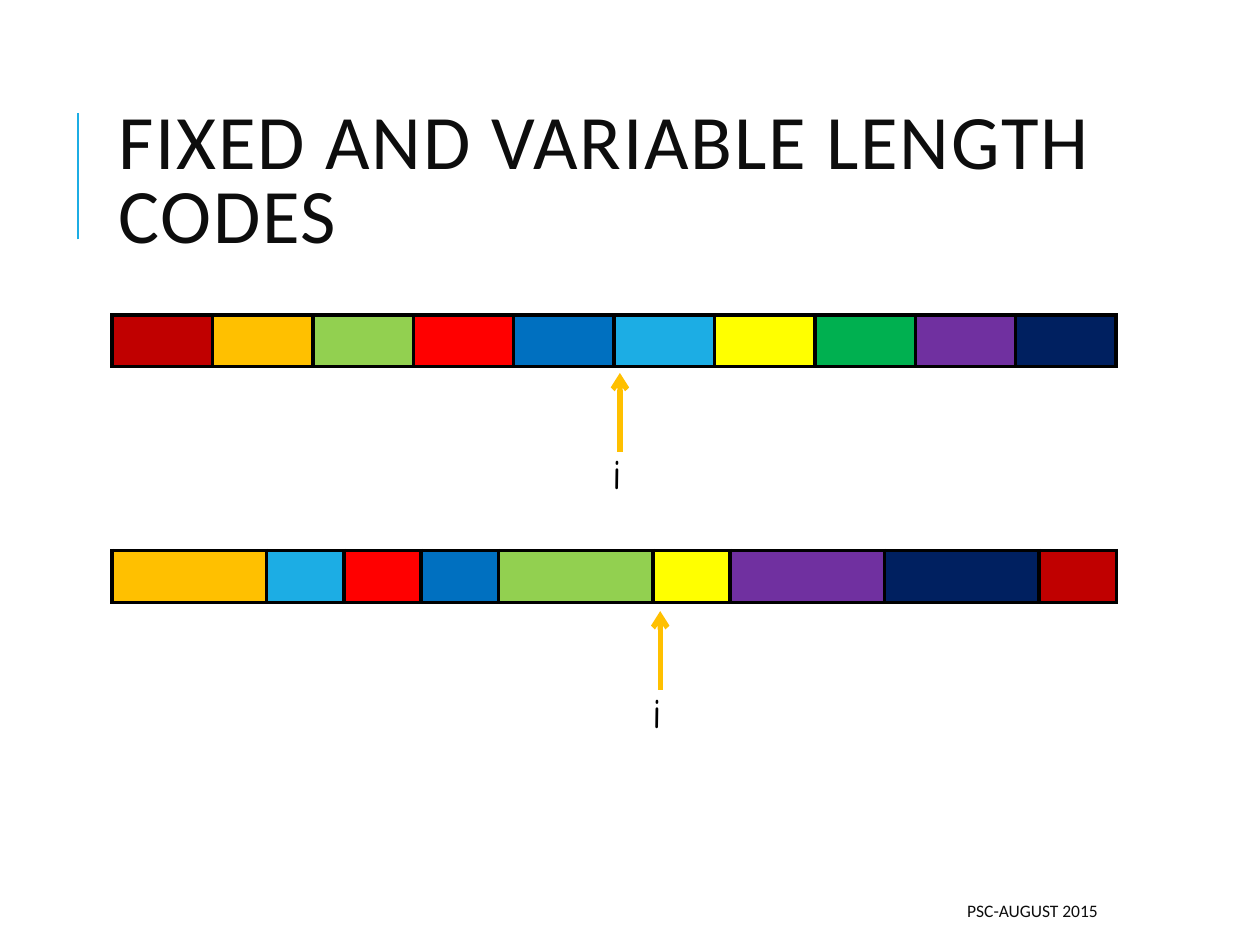
import pptx
import pptx.dml.color
import pptx.enum.shapes
import pptx.enum.text
import pptx.oxml
import pptx.oxml.ns
import pptx.util
from lxml import etree

COLORS = {
    "black": "000000", "text": "0D0D0D", "dark red": "C00000", "orange": "FFC000",
    "lime": "92D050", "red": "FF0000", "blue": "0070C0", "sky": "1CADE4",
    "yellow": "FFFF00", "green": "00B050", "purple": "7030A0", "navy": "002060",
}
FIXED_CODES = ["dark red", "orange", "lime", "red", "blue",
               "sky", "yellow", "green", "purple", "navy"]
# Each variable-length code takes one or two units
VARIABLE_CODES = [("orange", 2), ("sky", 1), ("red", 1), ("blue", 1), ("lime", 2),
                  ("yellow", 1), ("purple", 2), ("navy", 2), ("dark red", 1)]
BAR_LEFT, BAR_WIDTH, BAR_HEIGHT = 0.89, 7.97, 0.41
BORDER_WIDTH = 2.25
inches = pptx.util.Inches


def rgb(name):
    return pptx.dml.color.RGBColor.from_string(COLORS[name])


def format_text(text_frame, size, font, color, align=None):
    paragraph = text_frame.paragraphs[0]
    paragraph.alignment = align
    run = paragraph.runs[0]
    run.font.size = pptx.util.Pt(size)
    run.font.name = font
    run.font.color.rgb = rgb(color)
    return paragraph


def set_title(slide, text):
    title = slide.shapes.title
    title.left, title.top = inches(0.84), inches(0.64)
    title.width, title.height = inches(7.97), inches(1.64)
    text_frame = title.text_frame
    text_frame.text = text
    text_frame.auto_size = pptx.enum.text.MSO_AUTO_SIZE.NONE
    text_frame.vertical_anchor = pptx.enum.text.MSO_ANCHOR.MIDDLE
    paragraph = format_text(text_frame, 44, "Calibri", "text", pptx.enum.text.PP_ALIGN.LEFT)
    paragraph.line_spacing = 0.8
    paragraph.space_before = pptx.util.Pt(0)
    paragraph.runs[0].font._element.set("spc", "100")


def add_text(slide, text, box, size, font, color, align=None, wrap=False):
    shape = slide.shapes.add_textbox(*map(inches, box))
    text_frame = shape.text_frame
    text_frame.text = text
    text_frame.word_wrap = wrap
    format_text(text_frame, size, font, color, align)
    return shape


def add_line(slide, x, start, end, color, width, arrow=False):
    line = slide.shapes.add_connector(
        pptx.enum.shapes.MSO_CONNECTOR.STRAIGHT,
        inches(x), inches(start), inches(x), inches(end))
    line.line.color.rgb = rgb(color)
    line.line.width = pptx.util.Pt(width)
    if arrow:
        head = etree.SubElement(line.line._get_or_add_ln(), pptx.oxml.ns.qn("a:headEnd"))
        head.set("type", "arrow")
    etree.SubElement(line._element.spPr, pptx.oxml.ns.qn("a:effectLst"))


def set_borders(cell, visible):
    """Draw the named sides of a cell and clear the others."""
    width = pptx.util.Pt(BORDER_WIDTH)
    for index, side in enumerate("LRTB"):
        paint = (f'<a:solidFill><a:srgbClr val="{COLORS["black"]}"/></a:solidFill>'
                 if side in visible else "<a:noFill/>")
        border = pptx.oxml.parse_xml(
            f'<a:ln{side} {pptx.oxml.ns.nsdecls("a")} w="{width}">{paint}</a:ln{side}>')
        cell._tc.get_or_add_tcPr().insert(index, border)


def add_code_bar(slide, top, units):
    """One cell per unit; neighbours of the same colour form one code."""
    frame = slide.shapes.add_table(1, len(units), inches(BAR_LEFT), inches(top),
                                   inches(BAR_WIDTH), inches(BAR_HEIGHT))
    table = frame.table
    table.first_row = False
    table.horz_banding = False
    for column, color in enumerate(units):
        table.columns[column].width = inches(BAR_WIDTH / len(units))
        cell = table.cell(0, column)
        cell.fill.solid()
        cell.fill.fore_color.rgb = rgb(color)
        sides = "TB"
        if units[column - 1:column] != [color]:
            sides += "L"
        if units[column + 1:column + 2] != [color]:
            sides += "R"
        set_borders(cell, sides)


def add_pointer(slide, x, arrow_top, label_top):
    add_line(slide, x, arrow_top, arrow_top + 0.63, "orange", 3, arrow=True)
    add_text(slide, "i", (x - 0.16, label_top, 0.3, 0.5), 24, "Comic Neue", "black")


def main():
    presentation = pptx.Presentation()
    presentation.slide_width, presentation.slide_height = inches(10), inches(7.5)
    slide = presentation.slides.add_slide(presentation.slide_layouts[5])

    # Title with its accent line
    add_line(slide, 0.62, 1.9, 0.9, "sky", 1.5)
    set_title(slide, "FIXED AND VARIABLE LENGTH CODES")

    # Fixed-length codes
    add_code_bar(slide, 2.5, FIXED_CODES)
    add_pointer(slide, 4.92, 2.96, 3.5)

    # Variable-length codes
    units = [color for color, length in VARIABLE_CODES for _ in range(length)]
    add_code_bar(slide, 4.37, units)
    add_pointer(slide, 5.24, 4.85, 5.4)

    # Footer
    footer = add_text(slide, "PSC-AUGUST 2015", (3.97, 7.08, 4.84, 0.3), 10, "Calibri",
                      "text", pptx.enum.text.PP_ALIGN.RIGHT, wrap=True)
    footer.text_frame.vertical_anchor = pptx.enum.text.MSO_ANCHOR.MIDDLE

    presentation.save("out.pptx")


if __name__ == "__main__":
    main()
